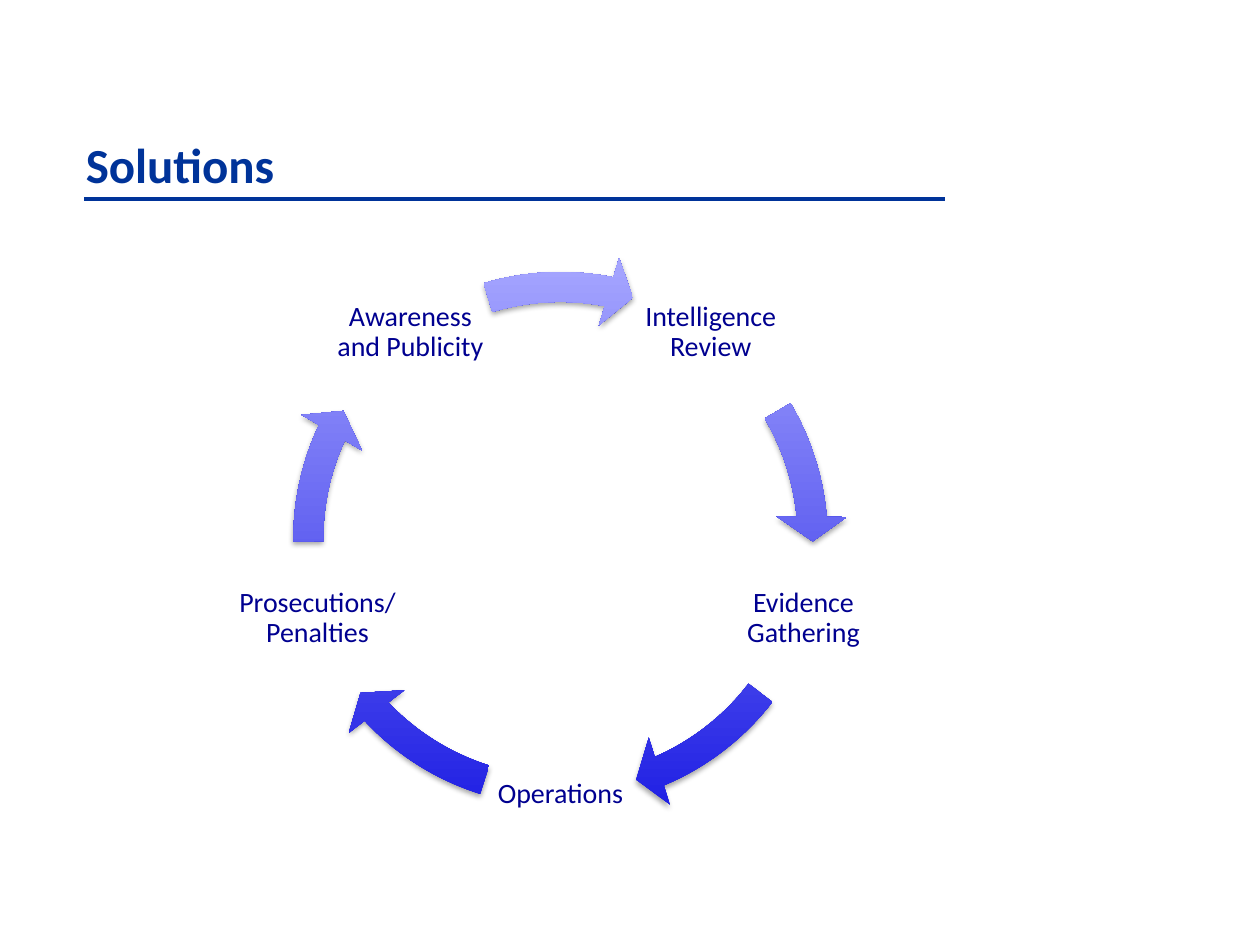
from math import cos, radians, sin

from lxml import etree
from pptx import Presentation
from pptx.dml.color import RGBColor
from pptx.enum.shapes import MSO_CONNECTOR, MSO_SHAPE
from pptx.enum.text import MSO_ANCHOR, PP_ALIGN
from pptx.oxml import parse_xml
from pptx.oxml.ns import nsdecls, qn
from pptx.util import Cm, Pt

COLORS = {
    "title": "003399",
    "label": "000090",
    "arrow_dark": "1C1CE3",
    "arrow_light": "A7A7FF",
    "shadow": "000000",
}

# Cycle geometry in cm
CENTER_X, CENTER_Y = 11.3, 10.87
LABEL_RADIUS = 5.15
LABEL_SIZE = 3.1
ARROW_SIZE = 11.58

# Label, label width, start and end angle of the arrow that follows it
STEPS = [
    ("Intelligence Review", LABEL_SIZE, 329.43, 354.9),
    ("Evidence Gathering", LABEL_SIZE, 37.55, 66.92),
    ("Operations", LABEL_SIZE, 107.49, 136.85),
    ("Prosecutions/Penalties", 3.43, 179.51, 204.97),
    ("Awareness and Publicity", LABEL_SIZE, 253.3, 281.1),
]


def color(name):
    return RGBColor.from_string(COLORS[name])


def write_text(tf, text, *, size, color_name, font="Calibri", bold=False,
               align=PP_ALIGN.LEFT, line_spacing=1.0):
    p = tf.paragraphs[0]
    p.alignment = align
    p.line_spacing = line_spacing
    r = p.add_run()
    r.text = text
    r.font.name = font
    r.font.size = Pt(size)
    r.font.bold = bold
    r.font.color.rgb = color(color_name)


class CycleSlide:
    def __init__(self, prs):
        self.s = prs.slides.add_slide(prs.slide_layouts[6])

    def text_box(self, x, y, w, h, text, inset=None, anchor=MSO_ANCHOR.TOP, **style):
        tf = self.s.shapes.add_textbox(Cm(x), Cm(y), Cm(w), Cm(h)).text_frame
        tf.word_wrap = True
        tf.vertical_anchor = anchor
        if inset is not None:
            tf.margin_left = tf.margin_right = Cm(inset)
            tf.margin_top = tf.margin_bottom = Cm(inset)
        write_text(tf, text, **style)

    def title(self, text):
        self.text_box(1.48, 2.59, 18.2, 1.45, text,
                      size=28, color_name="title", bold=True)

    def rule(self, x1, x2, y):
        sp = self.s.shapes.add_connector(
            MSO_CONNECTOR.STRAIGHT, Cm(x1), Cm(y), Cm(x2), Cm(y))
        sp.line.color.rgb = color("title")
        sp.line.width = Pt(2)
        etree.SubElement(sp._element.spPr, qn("a:effectLst"))

    def label(self, text, width, angle):
        """Centre a label on the circle; angles run clockwise from the right."""
        x = CENTER_X + LABEL_RADIUS * cos(radians(angle))
        y = CENTER_Y + LABEL_RADIUS * sin(radians(angle))
        self.text_box(x - width / 2, y - LABEL_SIZE / 2, width, LABEL_SIZE, text,
                      inset=0.05, anchor=MSO_ANCHOR.MIDDLE, size=16,
                      color_name="label", align=PP_ALIGN.CENTER, line_spacing=0.9)

    def arrow(self, start, end):
        sp = self.s.shapes.add_shape(
            MSO_SHAPE.CIRCULAR_ARROW,
            Cm(CENTER_X - ARROW_SIZE / 2), Cm(CENTER_Y - ARROW_SIZE / 2),
            Cm(ARROW_SIZE), Cm(ARROW_SIZE))
        # One degree is 60000 units, and adjustments count in 100000
        values = (0.052, 5.6 * 0.6, end * 0.6, start * 0.6, 0.061)
        for i, value in enumerate(values):
            sp.adjustments[i] = value
        sp.fill.gradient()
        sp.fill.gradient_angle = 90
        for stop, name in zip(sp.fill.gradient_stops, ("arrow_dark", "arrow_light")):
            stop.color.rgb = color(name)
        sp.line.fill.background()
        self.soft_shadow(sp)

    def soft_shadow(self, sp):
        sp.shadow.inherit = False
        effects = sp._element.spPr.find(qn("a:effectLst"))
        effects.append(parse_xml(
            f'<a:outerShdw {nsdecls("a")} blurRad="{Pt(3.1)}" dist="{Pt(1.8)}" '
            f'dir="5400000" rotWithShape="0"><a:srgbClr val="{COLORS["shadow"]}">'
            '<a:alpha val="35000"/></a:srgbClr></a:outerShdw>'))


def main():
    prs = Presentation()
    prs.slide_width, prs.slide_height = Cm(25.4), Cm(19.05)
    slide = CycleSlide(prs)
    slide.rule(1.7, 19.05, 4.01)
    slide.title("Solutions")
    for i, (text, width, start, end) in enumerate(STEPS):
        slide.label(text, width, -54 + i * 360 / len(STEPS))
        slide.arrow(start, end)
    prs.save("out.pptx")


if __name__ == "__main__":
    main()
